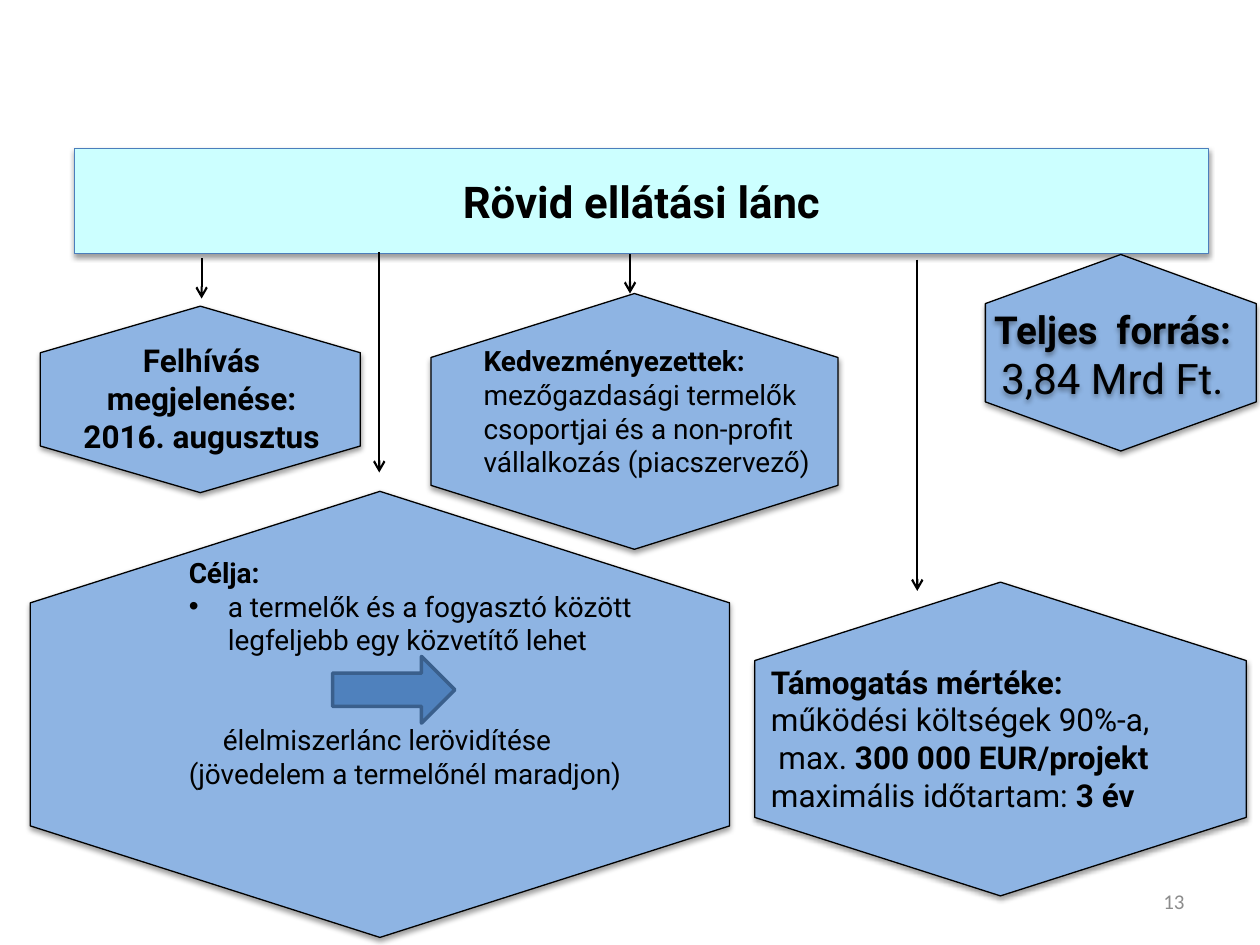
import pptx
import pptx.util
import pptx.dml.color
import pptx.enum.shapes
import pptx.enum.text
import pptx.oxml
import pptx.oxml.ns

Inches, Pt = pptx.util.Inches, pptx.util.Pt
SHAPE = pptx.enum.shapes.MSO_SHAPE
ALIGN = pptx.enum.text.PP_ALIGN
FIT = pptx.enum.text.MSO_AUTO_SIZE
NS = pptx.oxml.ns.nsdecls("a")
SHADOW = (f'<a:effectLst {NS}><a:outerShdw blurRad="40000" dist="20320" dir="5400000" '
          'rotWithShape="0"><a:srgbClr val="000000"><a:alpha val="38000"/></a:srgbClr>'
          '</a:outerShdw></a:effectLst>')

# Each node: hexagon box, text box, format of the text box, paragraphs.
# Each paragraph: runs as (text, font format), then paragraph format.
BOLD, PLAIN = {"bold": True}, {"bold": False}
CENTER = {"alignment": ALIGN.CENTER}
NODES = [
    ((0.32, 2.43, 2.54, 1.48), (0.51, 2.66, 2.18, 1.01), {"size": 18}, [
        ([("Felhívás megjelenése:", BOLD)], CENTER),
        ([("2016. augusztus", BOLD)], CENTER)]),
    ((3.42, 2.33, 3.23, 2.03), (3.74, 2.68, 3.07, 1.18), {"size": 16}, [
        ([("Kedvezményezettek:", BOLD)], {}),
        ([("mezőgazdasági termelők csoportjai és a non-profit "
           "vállalkozás (piacszervező)", PLAIN)], {})]),
    ((0.24, 3.9, 5.55, 3.54), (1.4, 4.36, 4, 1.99), {"size": 16}, [
        ([("Célja:", BOLD)], {}),
        ([("a termelők és a fogyasztó között legfeljebb egy közvetítő lehet", PLAIN)],
         {"left": 0.31, "indent": -0.31, "bullet": "•"}),
        ([("élelmiszerlánc lerövidítése", PLAIN)], {"indent": 0.27, "space_before": Pt(38)}),
        ([("(jövedelem a termelőnél maradjon)", PLAIN)], {})]),
    ((5.99, 4.62, 3.9, 2.49), (6.02, 5.21, 3.32, 1.31), {"size": 18, "wrap": False}, [
        ([("Támogatás mértéke:", BOLD)], {}),
        ([("működési költségek 90%-a,", PLAIN)], {}),
        ([("max. ", PLAIN), ("300 000 EUR/projekt", BOLD)], {"indent": 0.06}),
        ([("maximális időtartam: ", PLAIN), ("3 év", BOLD)], {})]),
    ((7.82, 2.02, 2.15, 1.56), (7.7, 2.38, 2.26, 0.88), {"size": 22, "shadow": True}, [
        ([("Teljes  forrás:", BOLD)], CENTER),
        ([("3,84 Mrd Ft.", {"bold": False, "size": Pt(24)})], CENTER)]),
]
# x, top and bottom of each arrow
ARROWS = [(7.28, 2.06, 4.69), (3.01, 2, 3.75), (5, 2.02, 2.33), (1.6, 2.05, 2.37)]


def color(value):
    return pptx.dml.color.RGBColor.from_string(value)


def inches(box):
    return [Inches(v) for v in box]


def add_shadow(s):
    s._element.spPr.append(pptx.oxml.parse_xml(SHADOW))


def paint(s, fill, line, width):
    s.fill.solid()
    s.fill.fore_color.rgb = color(fill)
    s.line.color.rgb = color(line)
    s.line.width = Pt(width)


def add_run(p, text, size, rgb="000000", name="Roboto", **formats):
    r = p.add_run()
    r.text = text
    r.font.color.rgb = color(rgb)
    for key, value in {"name": name, "size": Pt(size), **formats}.items():
        setattr(r.font, key, value)


def format_paragraph(p, left=0, indent=0, bullet=None, **formats):
    pPr = p._p.get_or_add_pPr()
    pPr.set("marL", str(Inches(left)))
    pPr.set("indent", str(Inches(indent)))
    if bullet:
        pPr.append(pptx.oxml.parse_xml(f'<a:buFont {NS} typeface="Arial"/>'))
        pPr.append(pptx.oxml.parse_xml(f'<a:buChar {NS} char="{bullet}"/>'))
    for key, value in formats.items():
        setattr(p, key, value)


def add_title(slide, box):
    s = slide.shapes.title
    s.left, s.top, s.width, s.height = inches(box)
    paint(s, "CCFFFF", "4B7EBC", 0.75)
    add_shadow(s)
    tf = s.text_frame
    tf.auto_size = FIT.NONE
    tf.vertical_anchor = pptx.enum.text.MSO_ANCHOR.MIDDLE
    p = tf.paragraphs[0]
    p.alignment = ALIGN.CENTER
    add_run(p, "Rövid ellátási lánc", 25, bold=True)


def add_hexagon(shapes, box):
    """Draw a hexagon, turned to stand on a point, that fills the box."""
    x, y, w, h = box
    s = shapes.add_shape(SHAPE.HEXAGON,
                         *inches((x + (w - h) / 2, y + (h - w) / 2, h, w)))
    s.rotation = 90
    paint(s, "8EB4E3", "000000", 0.75)
    add_shadow(s)


def add_node(slide, hexagon_box, text_box, paragraphs, size, wrap=True, shadow=False):
    group = slide.shapes.add_group_shape()
    add_hexagon(group.shapes, hexagon_box)
    s = group.shapes.add_textbox(*inches(text_box))
    if shadow:
        add_shadow(s)
    tf = s.text_frame
    tf.word_wrap = wrap
    tf.auto_size = FIT.SHAPE_TO_FIT_TEXT
    for i, (runs, formats) in enumerate(paragraphs):
        p = tf.add_paragraph() if i else tf.paragraphs[0]
        format_paragraph(p, **formats)
        for text, font in runs:
            add_run(p, text, **{"size": size, **font} if "size" not in font else
                    {**font, "size": font["size"].pt})


def add_down_arrow(slide, x, top, bottom):
    s = slide.shapes.add_connector(pptx.enum.shapes.MSO_CONNECTOR.STRAIGHT,
                                   *inches((x, top, x, bottom)))
    s.line.color.rgb = color("000000")
    s.line.width = Pt(1.25)
    s.line._get_or_add_ln().append(pptx.oxml.parse_xml(f'<a:tailEnd {NS} type="arrow"/>'))
    s._element.spPr.append(pptx.oxml.parse_xml(f"<a:effectLst {NS}/>"))


def add_block_arrow(slide, box):
    s = slide.shapes.add_shape(SHAPE.RIGHT_ARROW, *inches(box))
    s.shadow.inherit = False
    paint(s, "4F81BD", "3A5F8C", 2)


def add_page_number(slide, box):
    tf = slide.shapes.add_textbox(*inches(box)).text_frame
    tf.word_wrap = True
    tf.vertical_anchor = pptx.enum.text.MSO_ANCHOR.MIDDLE
    p = tf.paragraphs[0]
    p.alignment = ALIGN.RIGHT
    add_run(p, "13", 12, "8C8C8C", "Calibri")


def main():
    prs = pptx.Presentation()
    prs.slide_width, prs.slide_height = Inches(10), Inches(7.5)
    slide = prs.slides.add_slide(prs.slide_layouts.get_by_name("Title Only"))
    add_page_number(slide, (7.17, 6.95, 2.33, 0.4))
    add_title(slide, (0.59, 1.18, 9, 0.83))
    for hexagon_box, text_box, formats, paragraphs in NODES:
        add_node(slide, hexagon_box, text_box, paragraphs, **formats)
    for arrow in ARROWS:
        add_down_arrow(slide, *arrow)
    add_block_arrow(slide, (2.64, 5.21, 0.97, 0.53))
    prs.save("out.pptx")


if __name__ == "__main__":
    main()
